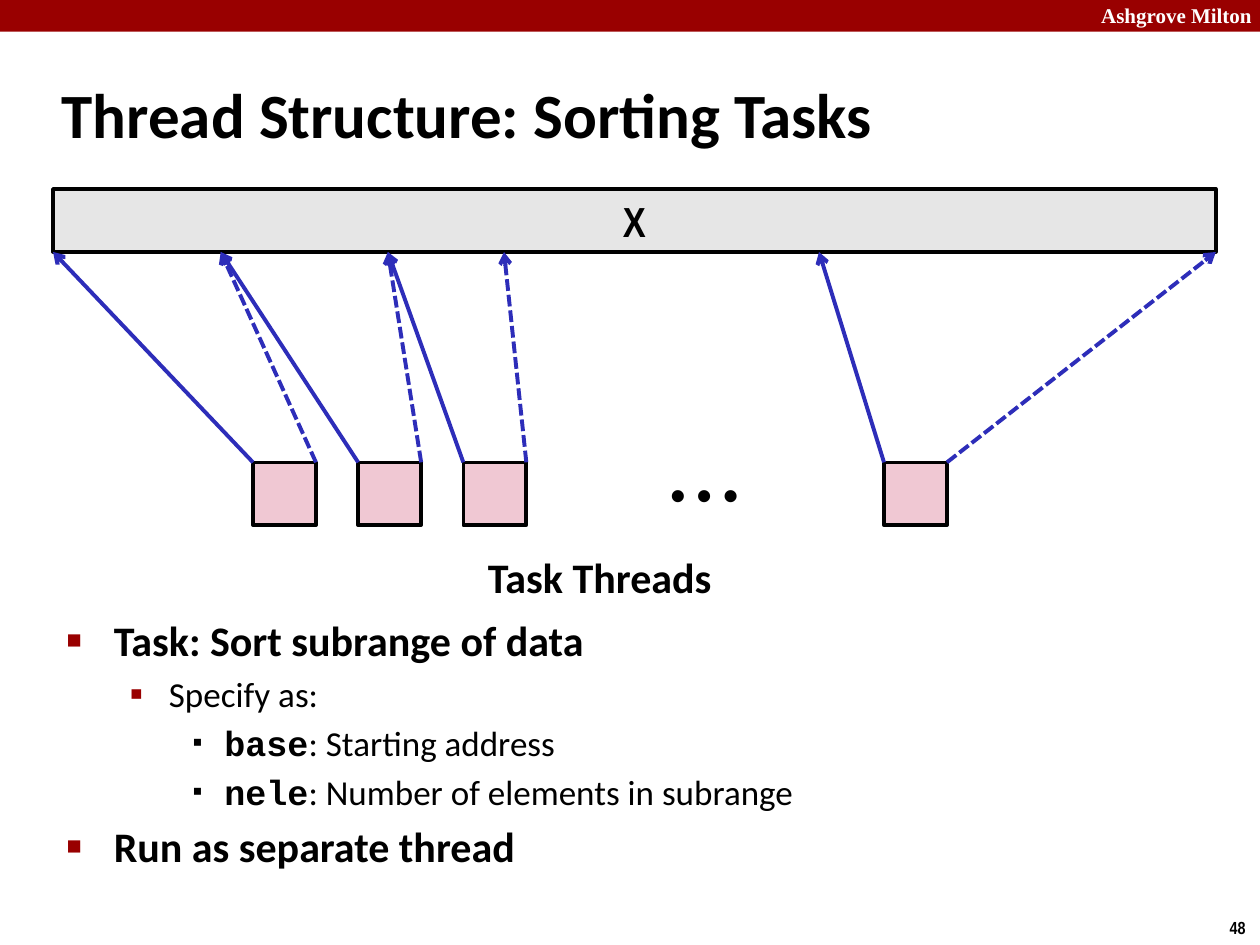
"""Build the slide on how sorting tasks map threads to subranges of an array."""
from dataclasses import dataclass

from lxml import etree
from pptx import Presentation
from pptx.dml.color import RGBColor
from pptx.enum.dml import MSO_LINE
from pptx.enum.shapes import MSO_CONNECTOR, MSO_SHAPE
from pptx.enum.text import MSO_ANCHOR, MSO_AUTO_SIZE, PP_ALIGN
from pptx.oxml.ns import qn
from pptx.util import Cm, Pt

RECTANGLE = MSO_SHAPE.RECTANGLE
STRAIGHT = MSO_CONNECTOR.STRAIGHT
SOLID, DASHED = MSO_LINE.SOLID, MSO_LINE.SQUARE_DOT
MIDDLE, TOP = MSO_ANCHOR.MIDDLE, MSO_ANCHOR.TOP
LEFT, CENTER = PP_ALIGN.LEFT, PP_ALIGN.CENTER


@dataclass(frozen=True)
class Theme:
    """Colours, fonts and type sizes."""
    red: str = "990000"
    black: str = "000000"
    white: str = "FFFFFF"
    gray: str = "E6E6E6"
    pink: str = "F0C8D3"
    blue: str = "2D2DB9"
    sans: str = "Calibri"
    narrow: str = "Arial Narrow"
    plain: str = "Arial"
    serif: str = "Times New Roman"
    code: str = "Courier New"
    title: int = 36
    heading: int = 24
    detail: int = 20
    header: int = 12
    number: int = 10


THEME = Theme()

TITLE = "Thread Structure: Sorting Tasks"
BULLETS = [
    (0, "", "Task: Sort subrange of data"),
    (1, "", "Specify as:"),
    (2, "base", ": Starting address"),
    (2, "nele", ": Number of elements in subrange"),
    (0, "", "Run as separate thread"),
]
LEVELS = [
    {"margin": 0.95, "hanging": 0.95, "mark": "■", "color": THEME.red,
     "percent": 60, "size": THEME.heading, "bold": True},
    {"margin": 2.06, "hanging": 0.79, "mark": "▪", "color": THEME.red,
     "percent": 110, "size": THEME.detail, "bold": False},
    {"margin": 3.18, "hanging": 0.64, "mark": "▪", "color": THEME.black,
     "percent": 80, "size": THEME.detail, "bold": False},
]
LABELS = [
    ("Ashgrove Milton", (21.95, -0.08, 3.63, 0.76), THEME.serif, THEME.header, THEME.white, LEFT, TOP),
    ("48", (24.54, 18.36, 0.86, 0.69), THEME.narrow, THEME.number, THEME.black, LEFT, TOP),
    ("• • •", (10.6, 9.32, 7.2, 1.27), THEME.plain, THEME.heading, THEME.black, CENTER, MIDDLE),
    ("Task Threads", (5.13, 11, 13.92, 1.27), THEME.sans, THEME.heading, THEME.black, CENTER, MIDDLE),
]
ARRAY = (1.07, 3.81, 23.44, 1.27)
ARRAY_BOTTOM = ARRAY[1] + ARRAY[3]
THREAD_LEFT, THREAD_TOP, THREAD_PITCH, THREAD_SIDE = 5.1, 9.32, 2.12, 1.27
SUBRANGES = {0: (1.07, 4.45), 1: (4.45, 7.82), 2: (7.82, 10.16), 6: (16.51, 24.51)}


def lengths(values):
    return [Cm(value) for value in values]


def style(font, name, size, color=THEME.black, bold=True):
    font.name, font.size, font.bold = name, Pt(size), bold
    font.color.rgb = RGBColor.from_string(color)


def place(shape, box):
    shape.left, shape.top, shape.width, shape.height = lengths(box)
    shape.text_frame.auto_size = MSO_AUTO_SIZE.NONE


def write_label(shape, text, name, size, color, alignment, anchor):
    frame = shape.text_frame
    frame.text = text
    frame.word_wrap = False
    frame.vertical_anchor = anchor
    paragraph = frame.paragraphs[0]
    paragraph.alignment = alignment
    style(paragraph.runs[0].font, name, size, color)


def add_rectangle(slide, box, fill, outlined=True):
    shape = slide.shapes.add_shape(RECTANGLE, *lengths(box))
    shape.shadow.inherit = False
    shape.fill.solid()
    shape.fill.fore_color.rgb = RGBColor.from_string(fill)
    if outlined:
        shape.line.color.rgb = RGBColor.from_string(THEME.black)
        shape.line.width = Pt(2)
    else:
        shape.line.fill.background()
    return shape


def add_arrow(slide, start, end, dash):
    arrow = slide.shapes.add_connector(STRAIGHT, *lengths(start + end))
    arrow.line.color.rgb = RGBColor.from_string(THEME.blue)
    arrow.line.width = Pt(2.25)
    arrow.line.dash_style = dash
    etree.SubElement(arrow.line._get_or_add_ln(), qn("a:tailEnd"), type="arrow")
    etree.SubElement(arrow._element.spPr, qn("a:effectLst"))


def set_indent(paragraph, margin, hanging):
    properties = paragraph._p.get_or_add_pPr()
    properties.set("marL", str(Cm(margin)))
    properties.set("indent", str(-Cm(hanging)))
    return properties


def set_bullet(paragraph, level):
    properties = set_indent(paragraph, level["margin"], level["hanging"])
    color = etree.SubElement(properties, qn("a:buClr"))
    etree.SubElement(color, qn("a:srgbClr"), val=level["color"])
    etree.SubElement(properties, qn("a:buSzPct"), val=str(level["percent"] * 1000))
    etree.SubElement(properties, qn("a:buFont"), typeface=THEME.plain)
    etree.SubElement(properties, qn("a:buChar"), char=level["mark"])


def fill_title(title):
    place(title, (0.99, 1.22, 21.08, 2.11))
    title.text_frame.text = TITLE
    title.text_frame.vertical_anchor = MIDDLE
    paragraph = title.text_frame.paragraphs[0]
    paragraph.alignment = LEFT
    set_indent(paragraph, 0.33, 0.33)
    style(paragraph.runs[0].font, THEME.sans, THEME.title)


def fill_body(body):
    place(body, (1.09, 12.27, 21.95, 5.33))
    frame = body.text_frame
    frame.text = "\n".join(text for _, _, text in BULLETS)
    for paragraph, (depth, keyword, text) in zip(frame.paragraphs, BULLETS):
        level = LEVELS[depth]
        paragraph.level = depth
        set_bullet(paragraph, level)
        if keyword:
            paragraph.text = keyword
            style(paragraph.runs[0].font, THEME.code, level["size"])
            paragraph.add_run().text = text
        style(paragraph.runs[-1].font, THEME.sans, level["size"], bold=level["bold"])


def draw_threads(slide):
    arrows = []
    for position, (first, last) in SUBRANGES.items():
        left = THREAD_LEFT + position * THREAD_PITCH
        add_rectangle(slide, (left, THREAD_TOP, THREAD_SIDE, THREAD_SIDE), THEME.pink)
        arrows += [(DASHED, left + THREAD_SIDE, last), (SOLID, left, first)]
    for dash, start, end in arrows:
        add_arrow(slide, (start, THREAD_TOP), (end, ARRAY_BOTTOM), dash)


def main():
    presentation = Presentation()
    presentation.slide_width, presentation.slide_height = Cm(25.4), Cm(19.05)
    slide = presentation.slides.add_slide(presentation.slide_layouts[1])
    fill_title(slide.shapes.title)
    fill_body(slide.placeholders[1])
    add_rectangle(slide, (0, 0, 25.4, 0.64), THEME.red, outlined=False)
    array = add_rectangle(slide, ARRAY, THEME.gray)
    write_label(array, "X", THEME.narrow, THEME.heading, THEME.black, CENTER, MIDDLE)
    draw_threads(slide)
    for text, box, *look in LABELS:
        write_label(slide.shapes.add_textbox(*lengths(box)), text, *look)
    presentation.save("out.pptx")


if __name__ == "__main__":
    main()
